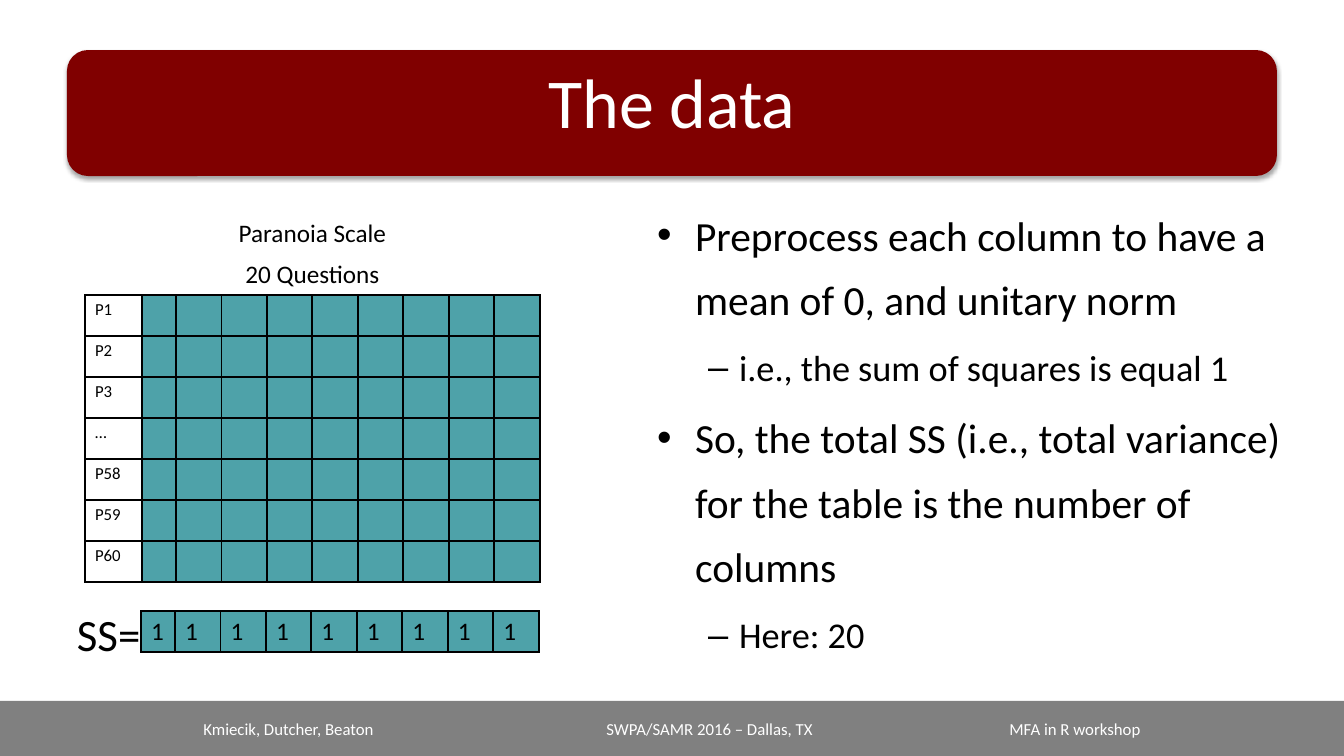
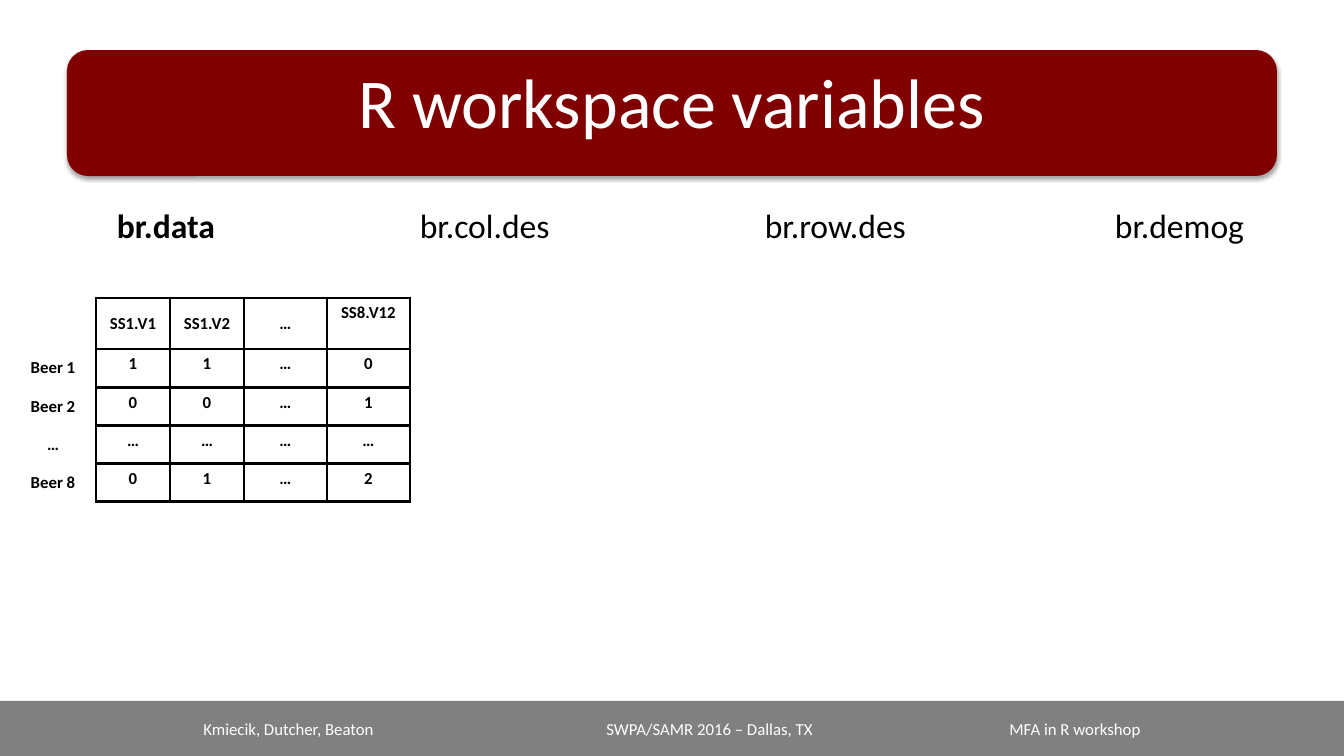
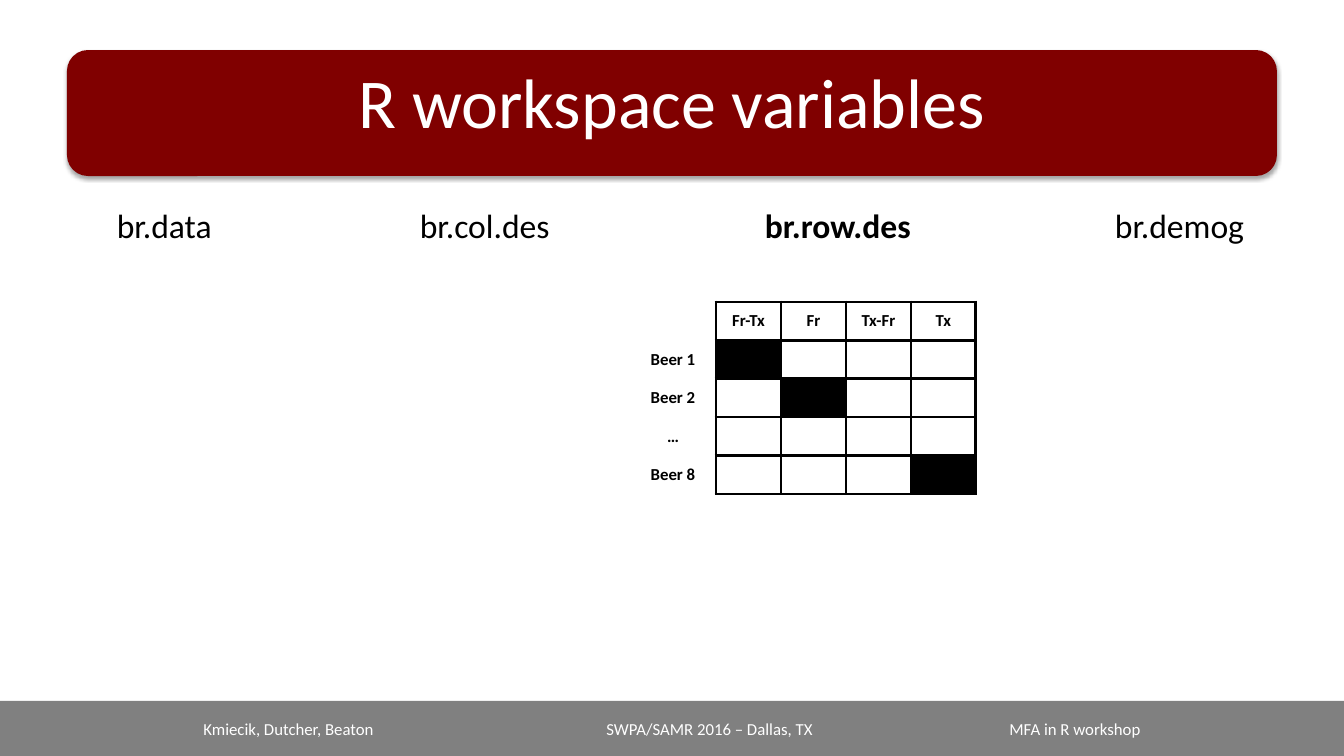
from lxml import etree
from pptx import Presentation
from pptx.dml.color import RGBColor
from pptx.enum import shapes, text
from pptx.oxml import parse_xml
from pptx.oxml.ns import nsdecls, qn
from pptx.util import Emu, Pt

SCALE = 914400 / 100.8
WIDE, HIGH = 1344, 756
FONT = "Calibri"
RED = RGBColor(0x80, 0x00, 0x00)
GREY = RGBColor(0x80, 0x80, 0x80)
TEAL = RGBColor(0x4E, 0xA2, 0xA9)
WHITE = RGBColor(0xFF, 0xFF, 0xFF)
BLACK = RGBColor(0x00, 0x00, 0x00)
LEFT, MID = text.PP_ALIGN.LEFT, text.PP_ALIGN.CENTER
TOP, HALF = text.MSO_ANCHOR.TOP, text.MSO_ANCHOR.MIDDLE
BAND = (67, 50, 1210, 126)
BARE = "{2D5ABB26-0587-4C30-8999-92F81FD0307C}"


def px(n):
    return Emu(round(n * SCALE))


def box(left, top, width, height):
    return px(left), px(top), px(width), px(height)


def say(para, words, size=18, color=BLACK, bold=False, align=LEFT, space=None, gap=0):
    para.alignment = align
    para.space_before = Pt(gap)
    if space:
        para.line_spacing = space
    if words:
        run = para.add_run()
        run.text = words
        run.font.name = FONT
        run.font.size = Pt(size)
        run.font.bold = bold
        run.font.color.rgb = color


def place(item, area):
    item.left, item.top, item.width, item.height = box(*area)


def fit(frame, anchor=TOP, wrap=True):
    frame.auto_size = text.MSO_AUTO_SIZE.NONE
    frame.vertical_anchor = anchor
    frame.word_wrap = wrap


def block(page, kind, area, fill):
    item = page.shapes.add_shape(kind, *box(*area))
    item.shadow.inherit = False
    item.fill.solid()
    item.fill.fore_color.rgb = fill
    item.line.fill.background()
    return item


def note(page, words, area, anchor=TOP, wrap=True, **form):
    frame = page.shapes.add_textbox(*box(*area)).text_frame
    fit(frame, anchor, wrap)
    say(frame.paragraphs[0], words, **form)


def band(deck, page):
    item = block(page, shapes.MSO_SHAPE.ROUNDED_RECTANGLE, BAND, RED)
    props = item._element.spPr
    props.remove(props.find(qn("a:effectLst")))
    props.append(parse_xml(
        f'<a:effectLst {nsdecls("a")}>'
        '<a:outerShdw blurRad="39370" dist="22860" dir="5400000" rotWithShape="0">'
        '<a:srgbClr val="000000"><a:alpha val="35000"/></a:srgbClr>'
        '</a:outerShdw></a:effectLst>'))
    deck.slide_master.shapes._spTree.insert(2, item._element)


def foot(page, area):
    item = block(page, shapes.MSO_SHAPE.RECTANGLE, area, GREY)
    fit(item.text_frame, HALF)
    para = item.text_frame.paragraphs[0]
    tabs = etree.SubElement(para._p.get_or_add_pPr(), qn("a:tabLst"))
    for stop in (403, 806):
        etree.SubElement(tabs, qn("a:tab"), pos=str(px(stop)), algn="l")
    say(para, "Kmiecik, Dutcher, Beaton\tSWPA/SAMR 2016 – Dallas, TX\tMFA in R workshop",
        size=12, color=WHITE, align=MID)


def start(deck, layout, title):
    page = deck.slides.add_slide(deck.slide_layouts[layout])
    head = page.shapes.title
    place(head, BAND)
    fit(head.text_frame)
    head.text_frame.margin_top = px(8)
    say(head.text_frame.paragraphs[0], title, size=50, color=WHITE, align=MID)
    foot(page, (0, 701, WIDE, 55))
    return page


def edge(cell, sides, weight):
    props = cell._tc.get_or_add_tcPr()
    for side in "LRTB":
        if side in sides:
            line = etree.SubElement(props, qn(f"a:ln{side}"), w=str(Pt(weight)))
            fill = etree.SubElement(line, qn("a:solidFill"))
            etree.SubElement(fill, qn("a:srgbClr"), val=str(BLACK))


def grid(page, left, top, cols, rows, look, weight):
    area = box(left, top, sum(cols), sum(rows))
    table = page.shapes.add_table(len(rows), len(cols), *area).table
    table.first_row = table.horz_banding = False
    table._tbl.tblPr.find(qn("a:tableStyleId")).text = BARE
    for col, width in zip(table.columns, cols):
        col.width = px(width)
    for r, height in enumerate(rows):
        table.rows[r].height = px(height)
        for c in range(len(cols)):
            cell = table.cell(r, c)
            form = look(r, c)
            words = form.pop("words", "")
            edge(cell, form.pop("sides", "LRTB"), weight)
            cell.fill.solid()
            cell.fill.fore_color.rgb = form.pop("fill", WHITE)
            cell.vertical_anchor = form.pop("anchor", TOP)
            if not words:
                cell.margin_top = cell.margin_bottom = 0
            say(cell.text_frame.paragraphs[0], words, **form)
    return table


def scale(page, left, top):
    heads = ["Paranoia Scale", "20 Questions"]
    names = ["P1", "P2", "P3", "…", "P58", "P59", "P60"]
    ones = [34] + [364 / 8] * 8
    cols = [57] + ones
    rows = [41] * 10

    def look(r, c):
        if r < 2:
            return dict(words="" if c else heads[r], align=MID,
                        anchor=TOP if r else HALF, sides="B" if r else "")
        if r == 9:
            return dict(sides="T")
        return dict(fill=TEAL) if c else dict(words=names[r - 2], size=12)

    table = grid(page, left, top, cols, rows, look, 1.5)
    for r in (0, 1, 9):
        table.cell(r, 0).merge(table.cell(r, len(cols) - 1))
    grid(page, left + 56, top + 398, ones, [41],
         lambda r, c: dict(words="1", fill=TEAL), 1.5)
    note(page, "SS=", (left - 18, top + 350, 356, 114), anchor=HALF, size=32, space=1.5)


def points(page, area, items):
    body = page.placeholders[1]
    place(body, area)
    frame = body.text_frame
    fit(frame, HALF)
    for i, (level, words) in enumerate(items):
        para = frame.add_paragraph() if i else frame.paragraphs[0]
        para.level = level
        props = para._p.get_or_add_pPr()
        props.set("marL", str(px((38, 82)[level])))
        props.set("indent", str(-px((38, 31)[level])))
        say(para, words, size=(29.6, 25.9)[level], space=1.3, gap=6 if i else 0)


def menu(page, top, chosen):
    tabs = [("br.data", 107, 120), ("br.col.des", 410, 162),
            ("br.row.des", 755, 167), ("br.demog", 1105, 156)]
    for words, left, width in tabs:
        bold = words == chosen
        note(page, words, (left, top, width + 6 * bold, 50),
             wrap=False, size=24, bold=bold)


def beers(page, left, top, cols, rows, heads, data, dark=()):
    names = ["", "Beer 1", "Beer 2", "…", "Beer 8"]

    def look(r, c):
        form = dict(size=12, bold=True, align=MID, anchor=HALF)
        if c == 0:
            return dict(form, words=names[r], sides="R")
        if r == 0:
            words = heads[c - 1]
            return dict(form, words=words, anchor=TOP if words == "SS8.V12" else HALF)
        return dict(form, words=data[r - 1][c - 1] if data else "", anchor=TOP,
                    fill=BLACK if (r, c) in dark else WHITE)

    grid(page, left, top, cols, rows, look, 2.25)


def main():
    deck = Presentation()
    deck.slide_width, deck.slide_height = px(WIDE), px(HIGH)

    page = start(deck, 1, "The data")
    band(deck, page)
    scale(page, 85, 213)
    points(page, (647, 176, 664, 499), [
        (0, "Preprocess each column to have a mean of 0, and unitary norm"),
        (1, "i.e., the sum of squares is equal 1"),
        (0, "So, the total SS (i.e., total variance) for the table is the number of columns"),
        (1, "Here: 20")])

    page = start(deck, 5, "R workspace variables")
    menu(page, 200, "br.data")
    beers(page, 10, 298, [86, 74, 74, 83, 83], [51] + [153 / 4] * 4,
          ["SS1.V1", "SS1.V2", "…", "SS8.V12"],
          ["11…0", "00…1", "…………", "01…2"])

    page = start(deck, 5, "R workspace variables")
    menu(page, 200, "br.row.des")
    beers(page, 630, 302, [86] + [65] * 4, [192 / 5] * 5,
          ["Fr-Tx", "Fr", "Tx-Fr", "Tx"], None, dark={(1, 1), (2, 2), (4, 4)})

    deck.save("out.pptx")


if __name__ == "__main__":
    main()
